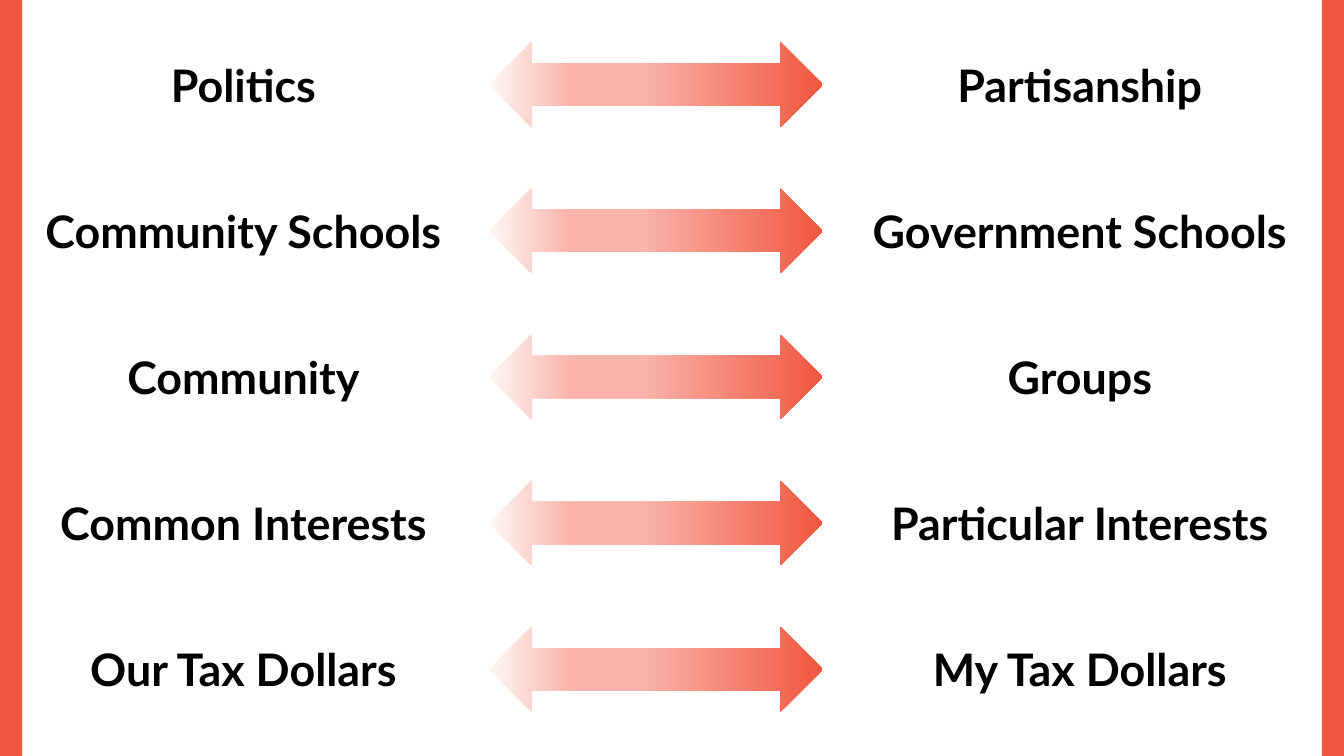
from copy import deepcopy

from pptx import Presentation
from pptx.dml.color import RGBColor
from pptx.enum.shapes import MSO_SHAPE
from pptx.enum.text import MSO_AUTO_SIZE, PP_ALIGN
from pptx.oxml.ns import qn
from pptx.util import Inches, Pt

RECT = MSO_SHAPE.RECTANGLE
ARROW = MSO_SHAPE.LEFT_RIGHT_ARROW
CENTER = PP_ALIGN.CENTER
FIT_SHAPE = MSO_AUTO_SIZE.SHAPE_TO_FIT_TEXT

COLORS = {"accent": "F1563F", "blush": "F9B3A9", "pale": "FEF7F5", "text": "000000"}
ARROW_STOPS = [(0, "pale"), (0.25, "blush"), (0.46, "blush"), (1, "accent")]
PAIRS = [
    ("Politics", "Partisanship"),
    ("Community Schools", "Government Schools"),
    ("Community", "Groups"),
    ("Common Interests", "Particular Interests"),
    ("Our Tax Dollars", "My Tax Dollars"),
]

WIDTH, HEIGHT = 13.33, 7.5
BAR_W = 0.22
LABEL_COLUMNS = [(0.29, 4.25), (8.42, 4.58)]  # left, width
LABEL_TOP, LABEL_H = 0.52, 0.64
ARROW_LEFT, ARROW_TOP, ARROW_W, ARROW_H = 4.85, 0.42, 3.31, 0.84
ROW_STEP = 1.45


def rgb(name):
    return RGBColor.from_string(COLORS[name])


def add_plain_shape(kind, left, top, width, height):
    """Add a preset shape without outline or shadow."""
    s = slide.shapes.add_shape(
        kind, Inches(left), Inches(top), Inches(width), Inches(height))
    s.shadow.inherit = False
    s.line.fill.background()
    return s


prs = Presentation()
prs.slide_width, prs.slide_height = Inches(WIDTH), Inches(HEIGHT)
slide = prs.slides.add_slide(prs.slide_layouts[6])

for left in (0, WIDTH - BAR_W):
    s = add_plain_shape(RECT, left, 0, BAR_W, HEIGHT)
    s.fill.solid()
    s.fill.fore_color.rgb = rgb("accent")

for row, pair in enumerate(PAIRS):
    offset = row * ROW_STEP

    for label, (left, width) in zip(pair, LABEL_COLUMNS):
        s = slide.shapes.add_textbox(
            Inches(left), Inches(LABEL_TOP + offset), Inches(width), Inches(LABEL_H))
        tf = s.text_frame
        tf.word_wrap = True
        tf.auto_size = FIT_SHAPE
        p = tf.paragraphs[0]
        p.text = label
        p.alignment = CENTER
        p.font.name = "Lato"
        p.font.size = Pt(32)
        p.font.bold = True
        p.font.color.rgb = rgb("text")

    s = add_plain_shape(ARROW, ARROW_LEFT, ARROW_TOP + offset, ARROW_W, ARROW_H)
    s.fill.gradient()
    s.fill.gradient_angle = 0
    # The default gradient has two stops; extend it to the number needed.
    stops = s._element.spPr.find(qn("a:gradFill")).find(qn("a:gsLst"))
    while len(stops) < len(ARROW_STOPS):
        stops.append(deepcopy(stops[0]))
    for stop, (position, color) in zip(s.fill.gradient_stops, ARROW_STOPS):
        stop.position = position
        stop.color.rgb = rgb(color)

prs.save("out.pptx")
